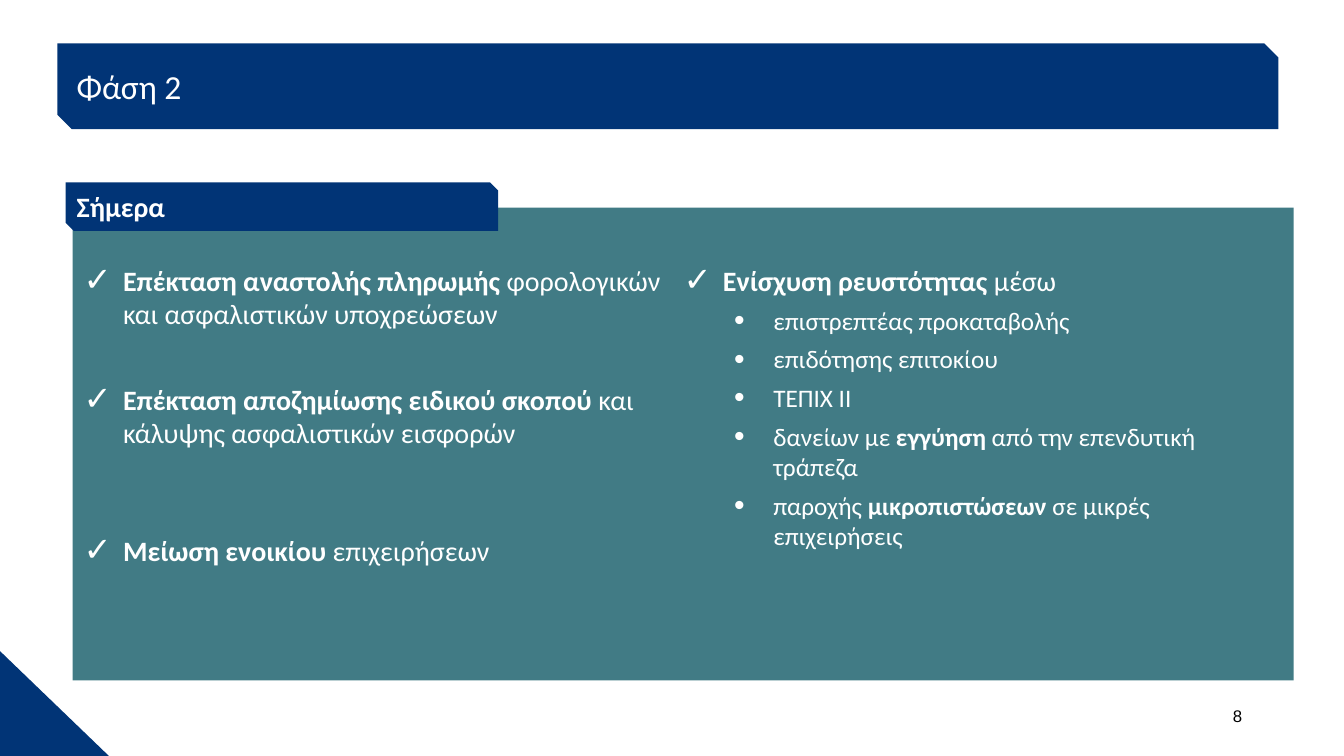
from lxml import etree
from pptx import Presentation
from pptx import util as u
from pptx.dml.color import RGBColor
from pptx.enum import shapes, text
from pptx.oxml.ns import qn

NAVY, TEAL, WHITE, BLACK = "013476", "417B85", "FFFFFF", "000000"
SNIPPED = shapes.MSO_SHAPE.SNIP_2_DIAG_RECTANGLE


def colour(value):
    return RGBColor.from_string(value)


def write(para, parts, size=20, ink=WHITE, font="Calibri", align=text.PP_ALIGN.LEFT):
    para.alignment = align
    for words, bold in parts:
        span = para.add_run()
        span.text = words
        span.font.size = u.Pt(size)
        span.font.name = font
        span.font.bold = bold
        span.font.color.rgb = colour(ink)


def add_bullet(para, symbol, indent):
    props = para._p.get_or_add_pPr()
    props.set("marL", str(u.Inches(indent)))
    props.set("indent", str(-u.Inches(0.39)))
    etree.SubElement(props, qn("a:buSzPct"), val="120000")
    etree.SubElement(props, qn("a:buFont"), typeface="Arial")
    etree.SubElement(props, qn("a:buChar"), char=symbol)


class SlideBuilder:
    def __init__(self, deck):
        self.page = deck.slides.add_slide(deck.slide_layouts[5])

    def frame(self, shape, insets, anchor=text.MSO_ANCHOR.TOP):
        frame = shape.text_frame
        frame.word_wrap = True
        frame.auto_size = text.MSO_AUTO_SIZE.NONE
        frame.vertical_anchor = anchor
        frame.margin_left = frame.margin_right = u.Inches(insets[0])
        frame.margin_top = frame.margin_bottom = u.Inches(insets[1])
        return frame

    def title(self, area, words):
        bar = self.block(SNIPPED, area, NAVY)
        title = self.page.shapes.title
        title.left, title.top, title.width, title.height = map(u.Inches, area)
        bar._element.addnext(title._element)
        frame = self.frame(title, (0.19, 0.02), text.MSO_ANCHOR.MIDDLE)
        write(frame.paragraphs[0], [(words, False)], size=24)

    def block(self, kind, area, fill):
        block = self.page.shapes.add_shape(kind, *map(u.Inches, area))
        block.shadow.inherit = False
        block.fill.solid()
        block.fill.fore_color.rgb = colour(fill)
        block.line.fill.background()
        return block

    def label(self, area, words):
        tab = self.block(SNIPPED, area, NAVY)
        frame = self.frame(tab, (0.07, 0.03))
        write(frame.paragraphs[0], [(words, True)])

    def text_box(self, area, insets):
        box = self.page.shapes.add_textbox(*map(u.Inches, area))
        return self.frame(box, insets)

    def bullets(self, area, items):
        frame = self.text_box(area, (0, 0))
        for index, (level, gap, parts) in enumerate(items):
            para = frame.paragraphs[0] if index == 0 else frame.add_paragraph()
            para.level = level
            para.space_before = u.Pt(gap)
            add_bullet(para, "✓•"[level], (0.39, 0.89)[level])
            write(para, parts, size=(20, 18)[level])

    def page_number(self, area, number):
        frame = self.text_box(area, (0.1, 0.05))
        write(frame.paragraphs[0], [(number, False)], size=12, ink=BLACK,
              font="Arial", align=text.PP_ALIGN.RIGHT)


MEASURES = [
    (0, 0, [("Επέκταση αναστολής πληρωμής ", True),
            ("φορολογικών και ασφαλιστικών υποχρεώσεων", False)]),
    (0, 37, [("Επέκταση αποζημίωσης ειδικού σκοπού ", True),
             ("και κάλυψης ασφαλιστικών εισφορών", False)]),
    (0, 60, [("Μείωση ενοικίου ", True), ("επιχειρήσεων", False)]),
]
LIQUIDITY = [
    (0, 0, [("Ενίσχυση ρευστότητας ", True), ("μέσω", False)]),
    (1, 6, [("επιστρεπτέας προκαταβολής", False)]),
    (1, 6, [("επιδότησης επιτοκίου", False)]),
    (1, 6, [("ΤΕΠΙΧ ΙΙ", False)]),
    (1, 6, [("δανείων με ", False), ("εγγύηση ", True),
            ("από την επενδυτική τράπεζα", False)]),
    (1, 6, [("παροχής ", False), ("μικροπιστώσεων ", True),
            ("σε μικρές επιχειρήσεις", False)]),
]


def main():
    deck = Presentation()
    deck.slide_width, deck.slide_height = u.Inches(13.33), u.Inches(7.5)
    slide = SlideBuilder(deck)
    slide.block(shapes.MSO_SHAPE.RIGHT_TRIANGLE, (0, 6.46, 1.08, 1.04), NAVY)
    slide.title((0.57, 0.43, 12.11, 0.85), "Φάση 2")
    slide.block(shapes.MSO_SHAPE.RECTANGLE, (0.72, 2.06, 12.11, 4.69), TEAL)
    column_width = 5.95
    for column, items in enumerate((MEASURES, LIQUIDITY)):
        left = 0.83 + column * column_width
        slide.bullets((left, 2.61, column_width, 4.1), items)
    slide.label((0.65, 1.81, 4.29, 0.48), "Σήμερα")
    slide.page_number((9.42, 6.95, 3, 0.4), "8")
    deck.save("out.pptx")


if __name__ == "__main__":
    main()
